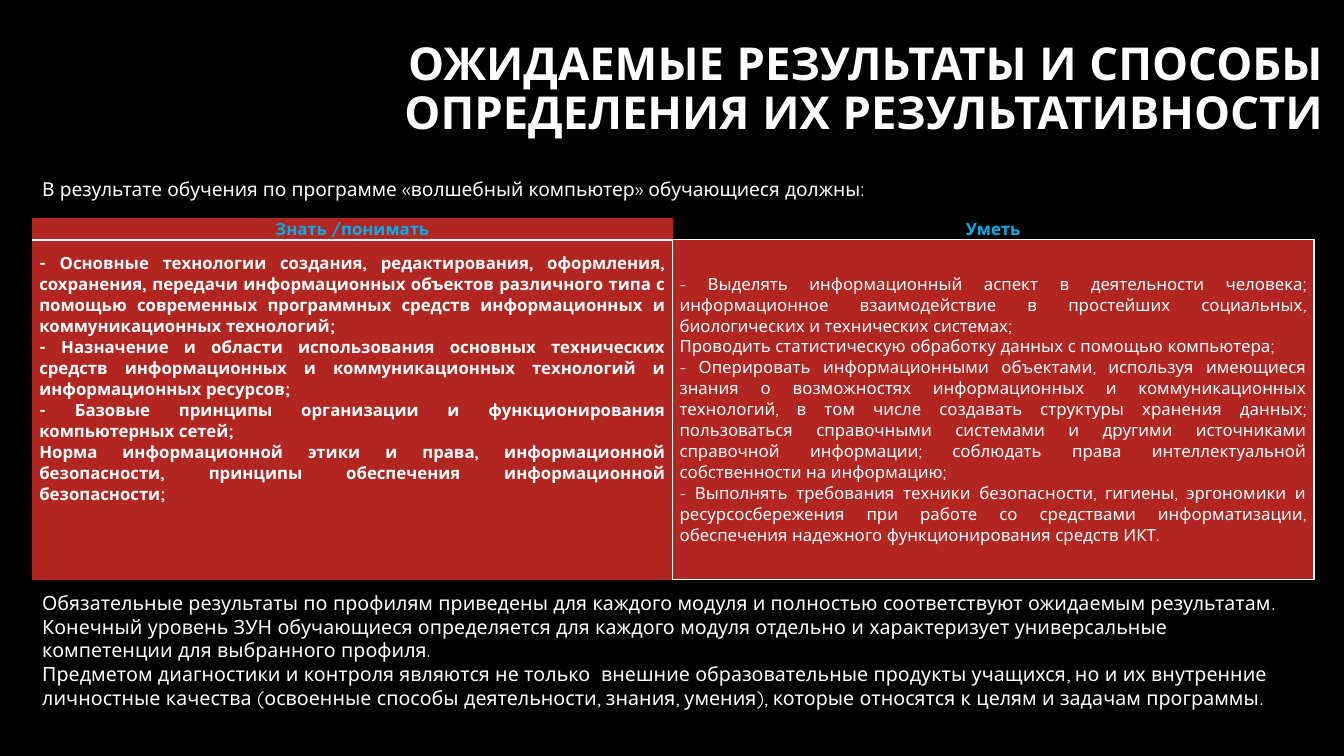
from dataclasses import dataclass

from lxml import etree
from pptx import Presentation
from pptx import util as u
from pptx.dml.color import RGBColor
from pptx.enum import text
from pptx.oxml import ns

WHITE, BLACK, RED, BLUE = "FFFFFF", "000000", "B32520", "00B0F0"
FONT = "Quicksand"


@dataclass
class CellBlock:
    row: int
    column: int
    paragraphs: list[str]
    fill: str
    colour: str
    bold: bool
    align: text.PP_ALIGN
    borders: dict[str, float]
    bottom_margin: float = 0


@dataclass
class TextBlock:
    left: float
    top: float
    width: float
    height: float
    paragraphs: list[str]
    size: float
    spacing: float = 1.0


KNOW = [
    "- Основные технологии создания, редактирования, оформления, сохранения, передачи "
    "информационных объектов различного типа с помощью современных программных средств "
    "информационных и коммуникационных технологий;",
    "- Назначение и области использования основных технических средств информационных и "
    "коммуникационных технологий и информационных ресурсов;",
    "- Базовые принципы организации и функционирования компьютерных сетей;",
    "Норма информационной этики и права, информационной безопасности, принципы "
    "обеспечения информационной безопасности;",
]
ABLE = [
    "- Выделять информационный аспект в деятельности человека; информационное "
    "взаимодействие в простейших социальных, биологических и технических системах;",
    "Проводить статистическую обработку данных с помощью компьютера;",
    "- Оперировать информационными объектами, используя имеющиеся знания о возможностях "
    "информационных и коммуникационных технологий, в том числе создавать структуры "
    "хранения данных; пользоваться справочными системами и другими источниками справочной "
    "информации; соблюдать права интеллектуальной собственности на информацию;",
    "- Выполнять требования техники безопасности, гигиены, эргономики и ресурсосбережения "
    "при работе со средствами информатизации, обеспечения надежного функционирования "
    "средств ИКТ.",
]
CENTER, JUSTIFY = text.PP_ALIGN.CENTER, text.PP_ALIGN.JUSTIFY
CELLS = [
    CellBlock(0, 0, ["Знать /понимать"], RED, BLUE, True, CENTER, {"B": 2}),
    CellBlock(0, 1, ["Уметь"], BLACK, BLUE, True, CENTER, {"B": 1}),
    CellBlock(1, 0, KNOW, RED, WHITE, True, JUSTIFY, {"R": 1}, 0.62),
    CellBlock(1, 1, ABLE, RED, WHITE, False, JUSTIFY, {"L": 1, "R": 2, "T": 1, "B": 1}),
]
NOTES = [
    TextBlock(0.32, 1.62, 9.42, 0.54, [
        "В результате обучения по программе «волшебный компьютер» обучающиеся должны:",
    ], 13.7, 0.9),
    TextBlock(0.32, 5.5, 12.55, 1.9, [
        "Обязательные результаты по профилям приведены для каждого модуля и полностью "
        "соответствуют ожидаемым результатам. Конечный уровень ЗУН обучающиеся определяется "
        "для каждого модуля отдельно и характеризует универсальные компетенции для "
        "выбранного профиля.",
        "Предметом диагностики и контроля являются не только  внешние образовательные "
        "продукты учащихся, но и их внутренние личностные качества (освоенные способы "
        "деятельности, знания, умения), которые относятся к целям и задачам программы.",
    ], 14),
]


def colour_of(value: str) -> RGBColor:
    return RGBColor.from_string(value)


def write(frame, paragraphs: list[str], *, size: float, colour: str = WHITE,
          bold: bool = False, align=text.PP_ALIGN.LEFT, spacing: float = 1.0) -> None:
    frame.word_wrap = True
    for index, wording in enumerate(paragraphs):
        para = frame.paragraphs[0] if index == 0 else frame.add_paragraph()
        para.alignment = align
        para.line_spacing = spacing
        para.space_before = u.Pt(0)
        span = para.add_run()
        span.text = wording
        span.font.name = FONT
        span.font.size = u.Pt(size)
        span.font.bold = bold
        span.font.color.rgb = colour_of(colour)


def set_borders(cell, borders: dict[str, float]) -> None:
    properties = cell._tc.get_or_add_tcPr()
    for index, side in enumerate("LRTB"):
        line = etree.Element(ns.qn(f"a:ln{side}"))
        if side in borders:
            line.set("w", str(u.Pt(borders[side])))
            fill = etree.SubElement(line, ns.qn("a:solidFill"))
            etree.SubElement(fill, ns.qn("a:srgbClr"), val=WHITE)
        else:
            etree.SubElement(line, ns.qn("a:noFill"))
        properties.insert(index, line)


def add_title(page) -> None:
    title = page.shapes.title
    title.left, title.top = u.Inches(3.8), u.Inches(0.77)
    title.width, title.height = u.Inches(9.42), u.Inches(1.41)
    frame = title.text_frame
    frame.auto_size = text.MSO_AUTO_SIZE.NONE
    frame.vertical_anchor = text.MSO_ANCHOR.BOTTOM
    frame.margin_bottom = u.Inches(0.8)
    write(frame, ["ОЖИДАЕМЫЕ РЕЗУЛЬТАТЫ И СПОСОБЫ ОПРЕДЕЛЕНИЯ ИХ РЕЗУЛЬТАТИВНОСТИ"],
          size=32.4, bold=True, align=text.PP_ALIGN.RIGHT, spacing=0.9)


def add_results_table(page) -> None:
    table = page.shapes.add_table(2, 2, u.Inches(0.32), u.Inches(2.16),
                                  u.Inches(12.71), u.Inches(3.59)).table
    table.horz_banding = False
    table.first_row = False
    for column, width in zip(table.columns, (6.35, 6.36)):
        column.width = u.Inches(width)
    for row, height in zip(table.rows, (0.22, 3.37)):
        row.height = u.Inches(height)
    for block in CELLS:
        cell = table.cell(block.row, block.column)
        cell.margin_left = cell.margin_right = u.Inches(0.07)
        cell.margin_top = u.Inches(0)
        cell.margin_bottom = u.Inches(block.bottom_margin)
        cell.vertical_anchor = text.MSO_ANCHOR.MIDDLE
        cell.fill.solid()
        cell.fill.fore_color.rgb = colour_of(block.fill)
        set_borders(cell, block.borders)
        write(cell.text_frame, block.paragraphs, size=12, colour=block.colour,
              bold=block.bold, align=block.align)


def add_note(page, block: TextBlock) -> None:
    box = page.shapes.add_textbox(u.Inches(block.left), u.Inches(block.top),
                                  u.Inches(block.width), u.Inches(block.height))
    box.text_frame.vertical_anchor = text.MSO_ANCHOR.MIDDLE
    write(box.text_frame, block.paragraphs, size=block.size, spacing=block.spacing)


def main() -> None:
    deck = Presentation()
    deck.slide_width, deck.slide_height = u.Inches(13.33), u.Inches(7.5)
    page = deck.slides.add_slide(deck.slide_layouts[5])
    page.background.fill.solid()
    page.background.fill.fore_color.rgb = colour_of(BLACK)
    add_title(page)
    add_results_table(page)
    for block in NOTES:
        add_note(page, block)
    deck.save("out.pptx")


if __name__ == "__main__":
    main()
